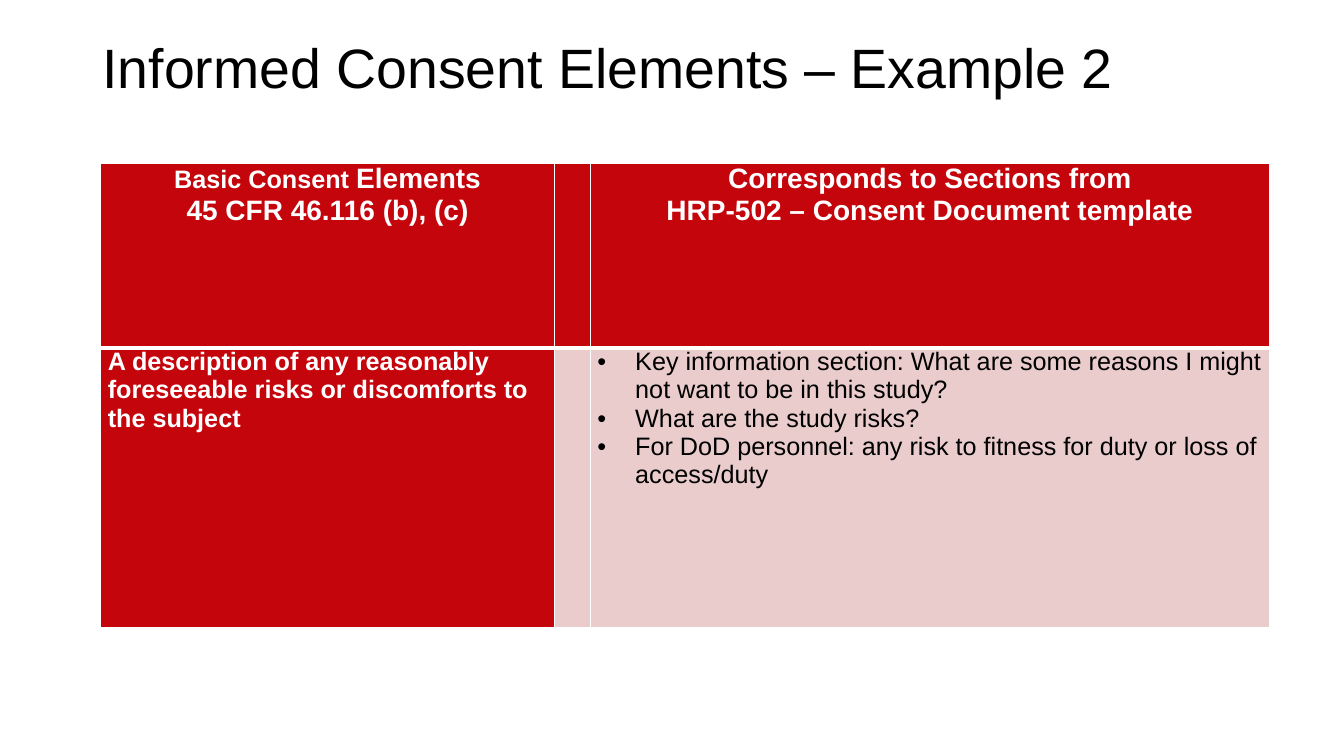
from lxml import etree
from pptx import Presentation
from pptx.dml.color import RGBColor
from pptx.enum.text import MSO_ANCHOR, PP_ALIGN
from pptx.oxml.ns import qn
from pptx.util import Pt

LEFT, CENTER = PP_ALIGN.LEFT, PP_ALIGN.CENTER
MIDDLE, TOP = MSO_ANCHOR.MIDDLE, MSO_ANCHOR.TOP
COLORS = {"red": "C5050C", "pink": "EACCCC", "white": "FFFFFF", "black": "000000"}


class ConsentSlide:
    """Draws titles and tables on one slide in a shared style."""

    font_name = "Arial"

    def __init__(self, presentation):
        self.slide = presentation.slides.add_slide(presentation.slide_layouts[6])

    def add_run(self, paragraph, text, size, color, bold=False):
        run = paragraph.add_run()
        run.text = text
        for name, value in {"name": self.font_name, "size": Pt(size), "bold": bold}.items():
            setattr(run.font, name, value)
        run.font.color.rgb = RGBColor.from_string(COLORS[color])

    def add_title(self, text, left, top, width, height):
        frame = self.slide.shapes.add_textbox(Pt(left), Pt(top), Pt(width), Pt(height)).text_frame
        frame.word_wrap = True
        frame.vertical_anchor = MIDDLE
        frame.paragraphs[0].line_spacing = 0.9
        self.add_run(frame.paragraphs[0], text, 39.6, "black")

    def add_table(self, left, top, column_widths, row_heights):
        table = self.slide.shapes.add_table(
            len(row_heights), len(column_widths), Pt(left), Pt(top),
            Pt(sum(column_widths)), Pt(sum(row_heights))).table
        table.first_row = table.horz_banding = False
        for column, width in zip(table.columns, column_widths):
            column.width = Pt(width)
        for row, height in zip(table.rows, row_heights):
            row.height = Pt(height)
        return table

    def add_borders(self, cell, widths):
        properties = cell._tc.get_or_add_tcPr()
        for side, width in widths.items():
            line = etree.SubElement(properties, qn(f"a:ln{side}"), w=str(Pt(width)))
            fill = etree.SubElement(line, qn("a:solidFill"))
            etree.SubElement(fill, qn("a:srgbClr"), val=COLORS["white"])

    def add_bullet_and_tab(self, paragraph, bulleted):
        properties = paragraph._p.get_or_add_pPr()
        if bulleted:
            properties.set("marL", str(Pt(27)))
            properties.set("indent", str(-Pt(27)))
            etree.SubElement(properties, qn("a:buFont"), typeface=self.font_name)
            etree.SubElement(properties, qn("a:buChar"), char="•")
        tabs = etree.SubElement(properties, qn("a:tabLst"))
        etree.SubElement(tabs, qn("a:tab"), pos=str(Pt(41)), algn="l")

    def fill_cell(self, cell, paragraphs, fill, borders, color="white", bold=True,
                  alignment=LEFT, bulleted=False):
        self.add_borders(cell, borders)
        cell.fill.solid()
        cell.fill.fore_color.rgb = RGBColor.from_string(COLORS[fill])
        layout = {"margin_left": Pt(5), "margin_right": Pt(5), "margin_top": 0,
                  "margin_bottom": 0, "vertical_anchor": TOP}
        for name, value in layout.items():
            setattr(cell, name, value)
        frame = cell.text_frame
        for index, runs in enumerate(paragraphs):
            paragraph = frame.add_paragraph() if index else frame.paragraphs[0]
            self.add_bullet_and_tab(paragraph, bulleted)
            paragraph.alignment = alignment
            for text, size in runs:
                self.add_run(paragraph, text, size, color, bold)


def main():
    presentation = Presentation()
    presentation.slide_width, presentation.slide_height = Pt(960), Pt(540)
    page = ConsentSlide(presentation)
    page.add_title("Informed Consent Elements – Example 2", 66.25, 25, 828, 50.5)

    table = page.add_table(72, 116.75, [324, 25.75, 485], [131.75, 199.5])
    header_texts = [
        [[("Basic Consent ", 18), ("Elements", 20)], [("45 CFR 46.116 (b), (c)", 20)]],
        [],
        [[("Corresponds to Sections from", 20)],
         [("HRP-502 – Consent Document template", 20)]],
    ]
    element = "A description of any reasonably foreseeable risks or discomforts to the subject"
    sections = [
        "Key information section: What are some reasons I might not want to be in this study?",
        "What are the study risks?",
        "For DoD personnel: any risk to fitness for duty or loss of access/duty",
    ]
    header_borders = {"L": 1, "R": 1, "T": 1, "B": 3}
    body_borders = {"L": 1, "R": 1, "T": 3, "B": 1}
    for column, paragraphs in enumerate(header_texts):
        page.fill_cell(table.cell(0, column), paragraphs, "red", header_borders,
                       alignment=CENTER)
    page.fill_cell(table.cell(1, 0), [[(element, 18)]], "red", body_borders)
    page.fill_cell(table.cell(1, 1), [], "pink", body_borders)
    page.fill_cell(table.cell(1, 2), [[(text, 18)] for text in sections], "pink",
                   body_borders, color="black", bold=False, bulleted=True)
    presentation.save("out.pptx")


if __name__ == "__main__":
    main()
